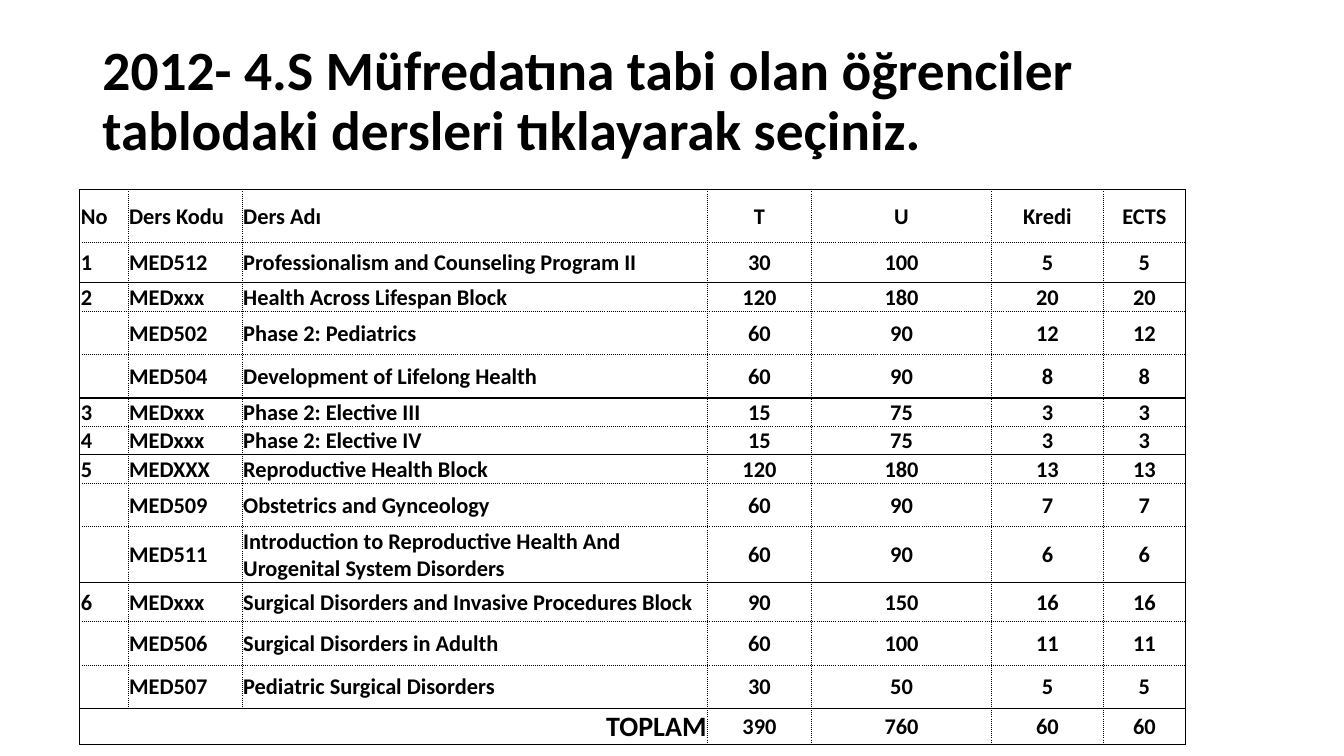
from lxml import etree
from pptx import Presentation
from pptx import util as u
from pptx.dml import color
from pptx.enum import text
from pptx.oxml import ns

FONT = "Calibri"
BLACK = "000000"
DOTTED, THIN, THICK = (0.5, "dot"), (0.5, "solid"), (1, "solid")
LEFT, CENTER, RIGHT = text.PP_ALIGN.LEFT, text.PP_ALIGN.CENTER, text.PP_ALIGN.RIGHT

COLUMN_WIDTHS = [34.5, 81.5, 332.5, 74, 129, 79.5, 59]
HEADER = ("No", "Ders Kodu", "Ders Adı", "T", "U", "Kredi", "ECTS")
# Each group closes with a thick rule; each course starts with its row height
COURSE_GROUPS = [
    [(29, "1", "MED512", "Professionalism and Counseling Program II", 30, 100, 5, 5)],
    [(16, "2", "MEDxxx", "Health Across Lifespan Block", 120, 180, 20, 20),
     (31, "", "MED502", "Phase 2: Pediatrics", 60, 90, 12, 12),
     (31, "", "MED504", "Development of Lifelong Health", 60, 90, 8, 8)],
    [(16, "3", "MEDxxx", "Phase 2: Elective III", 15, 75, 3, 3),
     (16.5, "4", "MEDxxx", "Phase 2: Elective IV", 15, 75, 3, 3)],
    [(16, "5", "MEDXXX", "Reproductive Health Block", 120, 180, 13, 13),
     (31, "", "MED509", "Obstetrics and Gynceology", 60, 90, 7, 7),
     (31, "", "MED511",
      "Introduction to Reproductive Health And Urogenital System Disorders", 60, 90, 6, 6)],
    [(28, "6", "MEDxxx", "Surgical Disorders and Invasive Procedures Block", 90, 150, 16, 16),
     (31, "", "MED506", "Surgical Disorders in Adulth", 60, 100, 11, 11),
     (31, "", "MED507", "Pediatric Surgical Disorders", 30, 50, 5, 5)],
]
TOTALS = ("TOPLAM", "", "", 390, 760, 60, 60)


def rgb(value):
    return color.RGBColor.from_string(value)


def add_span(para, words, size):
    span = para.add_run()
    span.text = words
    span.font.name = FONT
    span.font.size = u.Pt(size)
    span.font.bold = True
    span.font.color.rgb = rgb(BLACK)


def set_borders(cell, **sides):
    properties = cell._tc.get_or_add_tcPr()
    for index, side in enumerate("LRTB"):
        width, dash = sides[side]
        line = etree.Element(ns.qn(f"a:ln{side}"), w=str(u.Pt(width)))
        fill = etree.SubElement(line, ns.qn("a:solidFill"))
        etree.SubElement(fill, ns.qn("a:srgbClr"), val=BLACK)
        etree.SubElement(line, ns.qn("a:prstDash"), val=dash)
        properties.insert(index, line)


def fill_cell(cell, value, size, align):
    cell.fill.background()
    if value == "":
        return
    cell.vertical_anchor = text.MSO_ANCHOR.MIDDLE
    cell.margin_left = cell.margin_right = cell.margin_top = u.Pt(0.75)
    cell.margin_bottom = 0
    para = cell.text_frame.paragraphs[0]
    para.alignment = align
    add_span(para, str(value), size)


def draw_title(page, left, top, width, height):
    title = page.shapes.title
    title.left, title.top = u.Pt(left), u.Pt(top)
    title.width, title.height = u.Pt(width), u.Pt(height)
    frame = title.text_frame
    frame.word_wrap = True
    frame.auto_size = text.MSO_AUTO_SIZE.NONE
    frame.vertical_anchor = text.MSO_ANCHOR.MIDDLE
    para = frame.paragraphs[0]
    para.alignment = LEFT
    para.line_spacing = 0.9
    add_span(para, "2012- 4.S Müfredatına tabi olan öğrenciler", 39.6)
    para.add_line_break()
    add_span(para, "tablodaki dersleri tıklayarak seçiniz.", 39.6)


def draw_courses(page, left, top, width, height):
    # Rows, and the rule that closes each of them
    rows = [(37.5, HEADER, DOTTED)]
    for group in COURSE_GROUPS:
        for number, (row_height, *values) in enumerate(group, 1):
            rows.append((row_height, values, THICK if number == len(group) else DOTTED))
    rows.append((16, TOTALS, THIN))

    columns = len(COLUMN_WIDTHS)
    table = page.shapes.add_table(len(rows), columns, u.Pt(left), u.Pt(top),
                                  u.Pt(width), u.Pt(height)).table
    table.first_row = table.horz_banding = False
    for column, column_width in zip(table.columns, COLUMN_WIDTHS):
        column.width = u.Pt(column_width)

    # Cells
    rule_above = THIN
    for r, (row_height, values, rule_below) in enumerate(rows):
        table.rows[r].height = u.Pt(row_height)
        for c, value in enumerate(values):
            cell = table.cell(r, c)
            is_total = value == TOTALS[0]
            align = RIGHT if is_total else LEFT if c < 3 else CENTER
            fill_cell(cell, value, 20 if is_total else 16, align)
            set_borders(cell, L=THIN if c == 0 else DOTTED,
                        R=THIN if c == columns - 1 else DOTTED,
                        T=rule_above, B=rule_below)
        rule_above = rule_below

    # Total label spans the first three columns
    last = len(rows) - 1
    table.cell(last, 0).merge(table.cell(last, 2))


def main():
    deck = Presentation()
    deck.slide_width, deck.slide_height = u.Pt(960), u.Pt(540)
    page = deck.slides.add_slide(deck.slide_layouts[5])
    draw_title(page, 66, 13.5, 828, 119)
    draw_courses(page, 57, 135.5, sum(COLUMN_WIDTHS), 394)
    deck.save("out.pptx")


if __name__ == "__main__":
    main()
